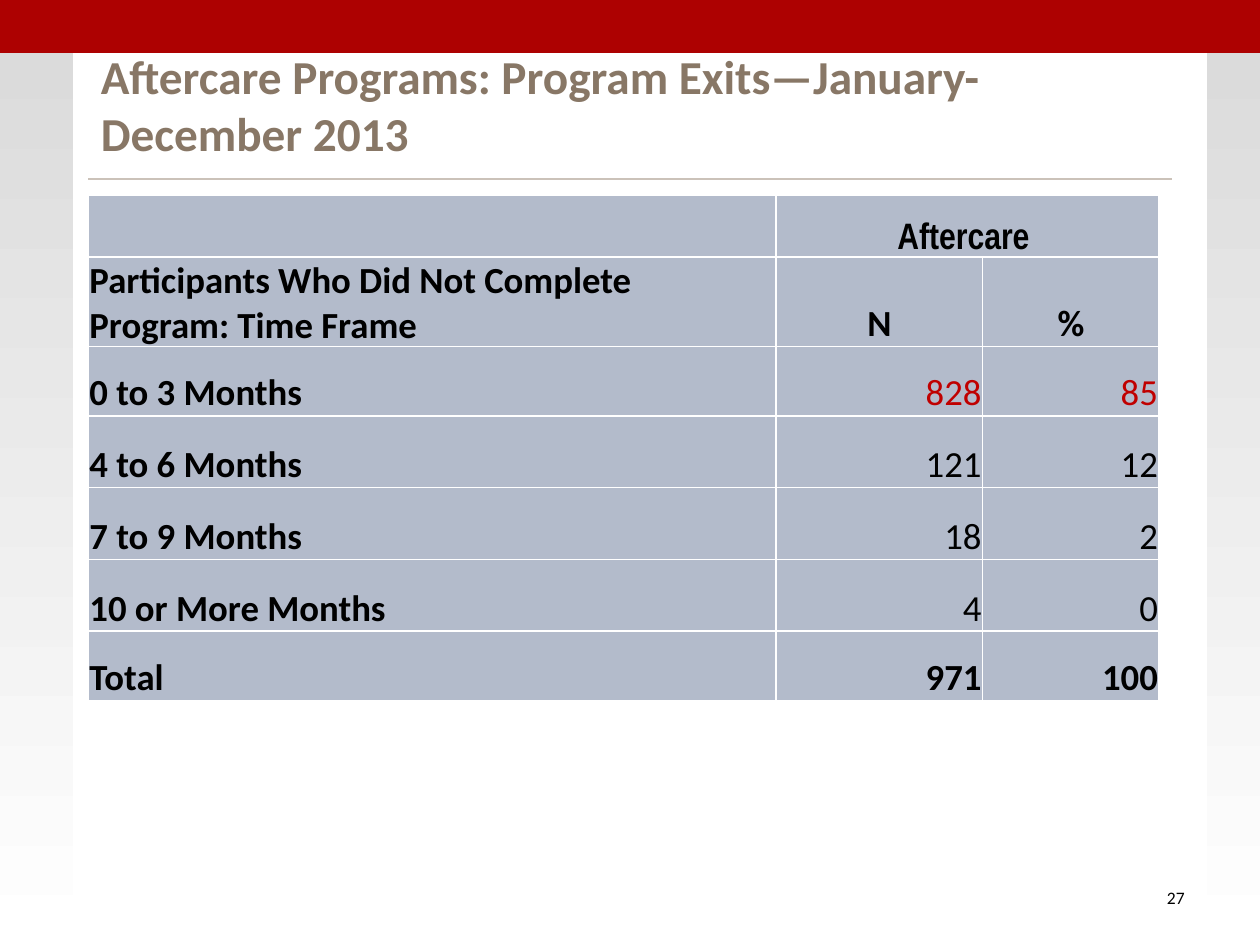
from lxml import etree
from pptx import Presentation
from pptx.dml.color import RGBColor
from pptx.enum import shapes, text
from pptx.oxml.ns import qn
from pptx.util import Inches, Pt

WHITE = RGBColor(0xFF, 0xFF, 0xFF)
BLACK = RGBColor(0, 0, 0)
GREY = RGBColor(0xD9, 0xD9, 0xD9)
BANNER_RED = RGBColor(0xAD, 0x01, 0x01)
ACCENT_RED = RGBColor(0xC0, 0, 0)
RULE_TAN = RGBColor(0xCB, 0xC2, 0xB9)
TITLE_BROWN = RGBColor(0x88, 0x77, 0x66)
CELL_BLUE = RGBColor(0xB3, 0xBB, 0xCB)

LEFT, CENTER, RIGHT = text.PP_ALIGN.LEFT, text.PP_ALIGN.CENTER, text.PP_ALIGN.RIGHT

COLUMN_WIDTHS = [5.46, 1.64, 1.4]
ROW_HEIGHTS = [0.49, 0.69, 0.55, 0.57, 0.57, 0.57, 0.55]
EXITS = [
    ("", "Aftercare ", ""),
    ("Participants Who Did Not Complete Program: Time Frame", "N", "%"),
    ("0 to 3 Months", "828", "85"),
    ("4 to 6 Months", "121", "12"),
    ("7 to 9 Months", "18", "2"),
    ("10 or More Months", "4", "0"),
    ("Total", "971", "100"),
]
HEADER_ROWS = 2
HIGHLIGHT_ROW = 2
TOTAL_ROW = len(EXITS) - 1


def set_font(paragraph, size, color, bold=False, name="Calibri"):
    font = paragraph.font
    font.name, font.size, font.bold = name, Pt(size), bold
    font.color.rgb = color


def paint_background(slide):
    fill = slide.background.fill
    fill.gradient()
    fill.gradient_angle = 270
    for stop, color in zip(fill.gradient_stops, (GREY, WHITE)):
        stop.color.rgb = color


def add_block(slide, left, top, width, height, color):
    block = slide.shapes.add_shape(
        shapes.MSO_SHAPE.RECTANGLE,
        Inches(left), Inches(top), Inches(width), Inches(height))
    block.shadow.inherit = False
    block.fill.solid()
    block.fill.fore_color.rgb = color
    block.line.fill.background()


def add_rule(slide, left, right, top):
    rule = slide.shapes.add_connector(
        shapes.MSO_CONNECTOR.STRAIGHT,
        Inches(left), Inches(top), Inches(right), Inches(top))
    rule.line.color.rgb = RULE_TAN
    rule.line.width = Pt(1.25)
    etree.SubElement(rule.element.spPr, qn("a:effectLst"))


def set_title(slide, wording):
    title = slide.shapes.title
    title.left, title.top = Inches(0.7), Inches(0.5)
    title.width, title.height = Inches(8.6), Inches(0.83)
    # Bring the title in front of the white panel
    title.element.getparent().append(title.element)
    frame = title.text_frame
    frame.text = wording
    frame.word_wrap = True
    frame.auto_size = text.MSO_AUTO_SIZE.NONE
    frame.vertical_anchor = text.MSO_ANCHOR.BOTTOM
    frame.paragraphs[0].alignment = LEFT
    set_font(frame.paragraphs[0], 27, TITLE_BROWN, bold=True)


def add_page_number(slide, number):
    box = slide.shapes.add_textbox(
        Inches(8.67), Inches(6.92), Inches(0.83), Inches(0.4))
    frame = box.text_frame
    frame.word_wrap = True
    frame.vertical_anchor = text.MSO_ANCHOR.MIDDLE
    frame.text = number
    frame.paragraphs[0].alignment = RIGHT
    set_font(frame.paragraphs[0], 10, BLACK)


def add_borders(cell):
    properties = cell._tc.get_or_add_tcPr()
    for position, side in enumerate(("lnL", "lnR", "lnT", "lnB")):
        line = etree.Element(qn(f"a:{side}"), w=str(Pt(1)))
        solid = etree.SubElement(line, qn("a:solidFill"))
        etree.SubElement(solid, qn("a:srgbClr"), val=str(WHITE))
        properties.insert(position, line)


def format_cell(cell, row, column):
    cell.fill.solid()
    cell.fill.fore_color.rgb = CELL_BLUE
    add_borders(cell)
    cell.vertical_anchor = text.MSO_ANCHOR.BOTTOM
    cell.margin_left = cell.margin_right = cell.margin_top = Inches(0.01)
    cell.margin_bottom = 0
    is_label = column == 0
    is_header = row < HEADER_ROWS
    paragraph = cell.text_frame.paragraphs[0]
    paragraph.alignment = LEFT if is_label else CENTER if is_header else RIGHT
    set_font(
        paragraph, 21,
        ACCENT_RED if row == HIGHLIGHT_ROW and not is_label else BLACK,
        bold=is_label or is_header or row == TOTAL_ROW,
        name="Arial Narrow" if row == 0 else "Calibri")


def add_exits_table(slide):
    table = slide.shapes.add_table(
        len(ROW_HEIGHTS), len(COLUMN_WIDTHS), Inches(0.7), Inches(1.55),
        Inches(sum(COLUMN_WIDTHS)), Inches(sum(ROW_HEIGHTS))).table
    for column, width in zip(table.columns, COLUMN_WIDTHS):
        column.width = Inches(width)
    for row, height in zip(table.rows, ROW_HEIGHTS):
        row.height = Inches(height)
    for r, values in enumerate(EXITS):
        for c, value in enumerate(values):
            cell = table.cell(r, c)
            cell.text = value
            format_cell(cell, r, c)
    table.cell(0, 1).merge(table.cell(0, 2))


def main():
    deck = Presentation()
    deck.slide_width, deck.slide_height = Inches(10), Inches(7.5)
    slide = deck.slides.add_slide(deck.slide_layouts[5])

    # Backdrop: white panel, red banner and title rule
    paint_background(slide)
    add_block(slide, 0.58, 0.42, 9, 7.08, WHITE)
    add_block(slide, 0, 0, 10, 0.42, BANNER_RED)
    add_rule(slide, 0.7, 9.3, 1.42)

    # Content
    set_title(slide, "Aftercare Programs: Program Exits—January-December 2013")
    add_page_number(slide, "27")
    add_exits_table(slide)
    deck.save("out.pptx")


if __name__ == "__main__":
    main()
